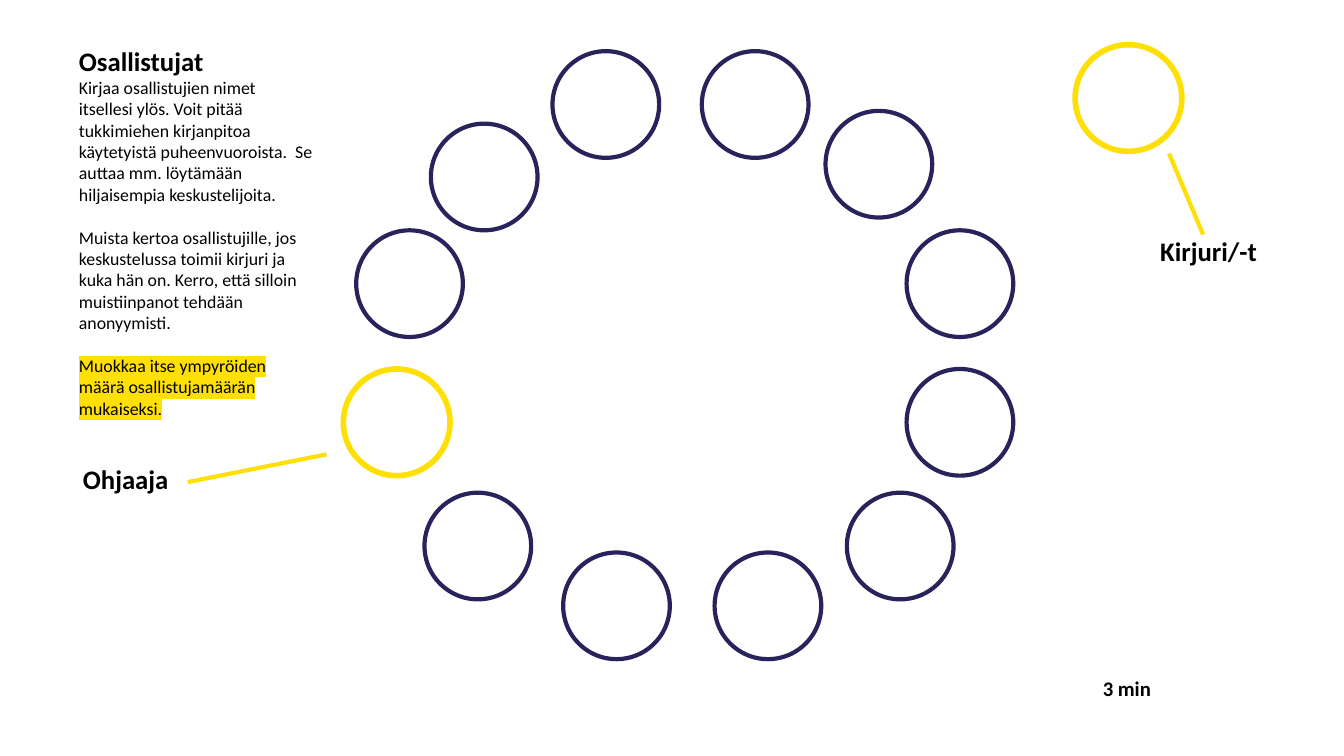
from lxml import etree
from pptx import Presentation
from pptx.dml.color import RGBColor
from pptx.enum import shapes, text
from pptx.oxml.ns import qn
from pptx.util import Inches, Pt

NAVY = RGBColor(0x29, 0x23, 0x5C)
YELLOW = RGBColor(0xFF, 0xE0, 0x06)
BLACK = RGBColor(0, 0, 0)
DIAMETER = 0.5


def write(sp, box, paragraphs, size=9, bold=True, insets=(0.1, 0.1, 0.1, 0.1),
          gap=0, spacing=1.0, align=text.PP_ALIGN.LEFT):
    """Place a text shape and fill it with (words, highlight) paragraphs."""
    sp.left, sp.top, sp.width, sp.height = [Inches(v) for v in box]
    tf = sp.text_frame
    tf.word_wrap = True
    tf.auto_size = text.MSO_AUTO_SIZE.NONE
    tf.vertical_anchor = text.MSO_ANCHOR.TOP
    tf.margin_left, tf.margin_top, tf.margin_right, tf.margin_bottom = [
        Inches(v) for v in insets]
    for i, (words, highlight) in enumerate(paragraphs):
        p = tf.add_paragraph() if i else tf.paragraphs[0]
        pPr = p._p.get_or_add_pPr()
        pPr.set("marL", "0")
        pPr.set("indent", "0")
        etree.SubElement(pPr, qn("a:buNone"))
        p.alignment = align
        p.line_spacing = spacing
        p.space_before = Pt(gap if i else 0)
        p.space_after = Pt(0)
        r = p.add_run()
        r.text = words
        r.font.size, r.font.bold, r.font.name = Pt(size), bold, "Calibri"
        r.font.color.rgb = BLACK
        if highlight:
            mark = etree.Element(qn("a:highlight"))
            etree.SubElement(mark, qn("a:srgbClr"), val=str(highlight))
            r._r.get_or_add_rPr().find(qn("a:solidFill")).addnext(mark)


# Slide in 16:9
prs = Presentation()
prs.slide_width = Inches(6.3)
prs.slide_height = Inches(6.3 * 9 / 16)
s = prs.slides.add_slide(prs.slide_layouts[1])

# Heading and instructions
write(s.shapes.title, (0.27, 0.11, 1.31, 0.25), [("Osallistujat", None)],
      insets=(0.1, 0.1, 0.1, 0))
write(s.placeholders[1], (0.27, 0.36, 1.31, 1.62), [
    ("Kirjaa osallistujien nimet itsellesi ylös. Voit pitää tukkimiehen "
     "kirjanpitoa käytetyistä puheenvuoroista.  Se auttaa mm. löytämään "
     "hiljaisempia keskustelijoita.", None),
    ("Muista kertoa osallistujille, jos keskustelussa toimii kirjuri ja kuka "
     "hän on. Kerro, että silloin muistiinpanot tehdään anonyymisti.", None),
    ("Muokkaa itse ympyröiden määrä osallistujamäärän mukaiseksi.", YELLOW),
], size=6, bold=False, insets=(0.1, 0, 0.11, 0.1), gap=7.3)

# Participants clockwise from the top, then the facilitator and the note taker
participants = [(3.29, 0.24), (3.87, 0.52), (4.25, 1.08), (4.25, 1.73),
                (3.97, 2.31), (3.35, 2.59), (2.64, 2.59), (1.99, 2.31),
                (1.67, 1.08), (2.02, 0.58), (2.59, 0.24)]
helpers = [(1.61, 1.73), (5.04, 0.21)]
for places, color, width in ((participants, NAVY, 1.42), (helpers, YELLOW, 1.89)):
    for x, y in places:
        sp = s.shapes.add_shape(shapes.MSO_SHAPE.OVAL, Inches(x), Inches(y),
                                Inches(DIAMETER), Inches(DIAMETER))
        sp.shadow.inherit = False
        sp.fill.background()
        sp.line.color.rgb = color
        sp.line.width = Pt(width)

# Role labels with their pointer lines
for label, x, y, ends in (("Ohjaaja", 0.29, 2.07, (0.88, 2.26, 1.53, 2.13)),
                          ("Kirjuri/-t", 5.34, 1.0, (5.48, 0.72, 5.64, 1.1))):
    write(s.shapes.add_textbox(0, 0, 0, 0), (x, y, 0.81, 1.21), [(label, None)])
    line = s.shapes.add_connector(shapes.MSO_CONNECTOR.STRAIGHT,
                                  *[Inches(v) for v in ends])
    line.line.color.rgb = YELLOW
    line.line.width = Pt(1.42)
    etree.SubElement(line._element.spPr, qn("a:effectLst"))

# Time for this step
write(s.shapes.add_textbox(0, 0, 0, 0), (5.11, 3.09, 0.62, 0.25),
      [("3 min", None)], size=7, insets=(0.06, 0.06, 0.06, 0.06),
      spacing=1.15, align=text.PP_ALIGN.JUSTIFY)

prs.save("out.pptx")
